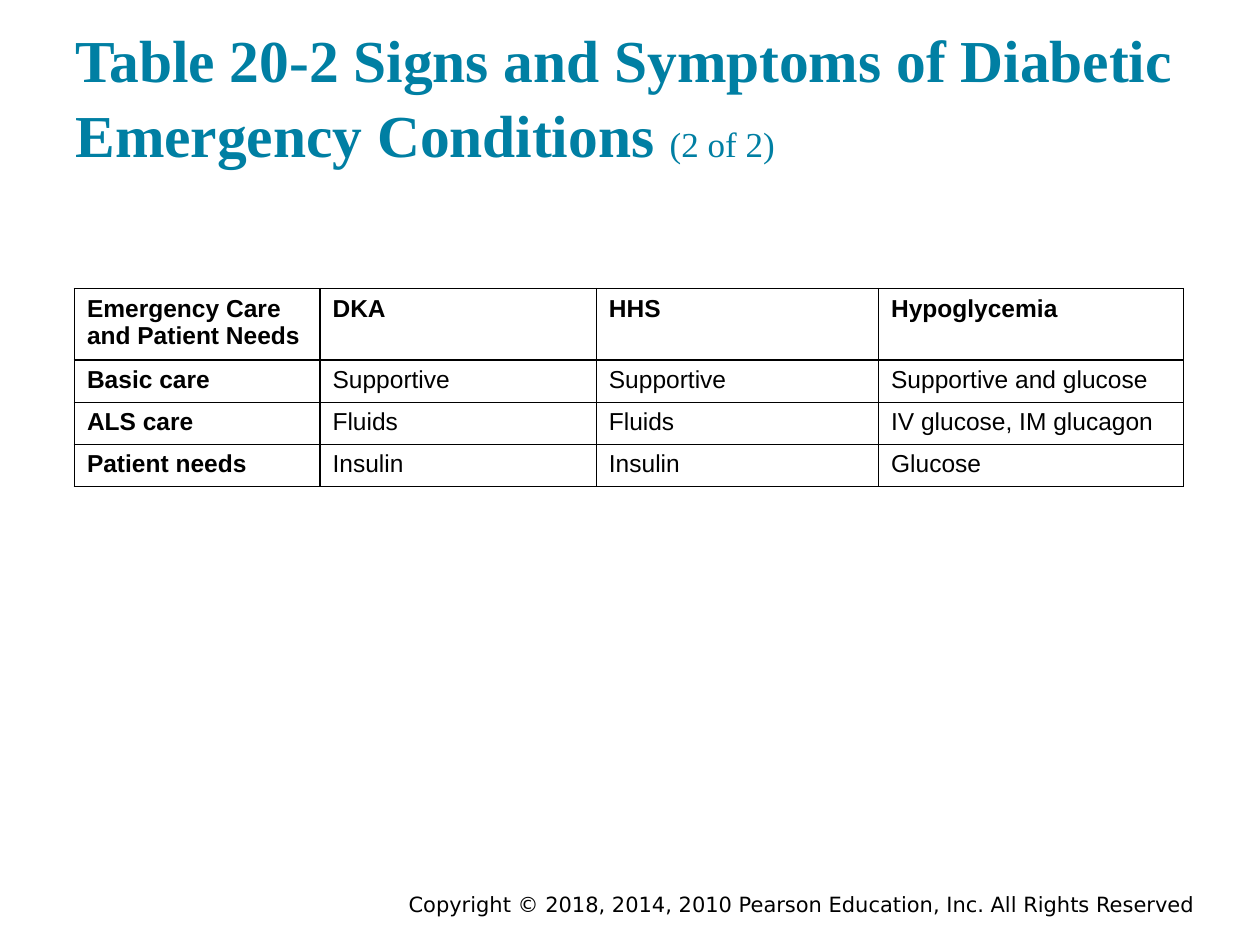
import pptx
import pptx.dml.color
import pptx.enum.text
import pptx.oxml
import pptx.oxml.ns
import pptx.util
from pptx.util import Cm

TITLE = [
    ("Table 20-2 Signs and Symptoms of Diabetic Emergency Conditions ", 34, True),
    ("(2 of 2)", 20, False),
]
ROWS = [
    ("Emergency Care\nand Patient Needs", "DKA", "HHS", "Hypoglycemia"),
    ("Basic care", "Supportive", "Supportive", "Supportive and glucose"),
    ("ALS care", "Fluids", "Fluids", "IV glucose, IM glucagon"),
    ("Patient needs", "Insulin", "Insulin", "Glucose"),
]
COPYRIGHT = "Copyright © 2018, 2014, 2010 Pearson Education, Inc. All Rights Reserved"
COL_WIDTHS = (4.95, 5.57, 5.69, 6.15)
ROW_HEIGHTS = (1.36, 0.81, 0.81, 0.81)
TEAL, BLACK, WHITE = "007FA3", "000000", "FFFFFF"


def paint(color, value):
    """Set a colour from a hex string."""
    color.rgb = pptx.dml.color.RGBColor.from_string(value)


def add_run(p, text, font, size, color, bold=False):
    """Append a formatted run to a paragraph."""
    r = p.add_run()
    r.text = text
    r.font.name = font
    r.font.size = pptx.util.Pt(size)
    r.font.bold = bold
    paint(r.font.color, color)


def add_borders(cell, color, width):
    """Draw a solid line on all four sides of a cell."""
    tcPr = cell._tc.get_or_add_tcPr()
    for side in ("lnL", "lnR", "lnT", "lnB"):
        tcPr.append(pptx.oxml.parse_xml(
            f'<a:{side} {pptx.oxml.ns.nsdecls("a")} w="{pptx.util.Pt(width)}">'
            f'<a:solidFill><a:srgbClr val="{color}"/></a:solidFill></a:{side}>'))


def add_title(s):
    """Place and fill the title placeholder."""
    sp = s.shapes.title
    sp.left, sp.top, sp.width, sp.height = Cm(1.27), Cm(0.61), Cm(22.86), Cm(3.05)
    tf = sp.text_frame
    tf.word_wrap = True
    tf.auto_size = pptx.enum.text.MSO_AUTO_SIZE.NONE
    tf.vertical_anchor = pptx.enum.text.MSO_ANCHOR.BOTTOM
    tf.margin_left = tf.margin_right = tf.margin_top = tf.margin_bottom = Cm(0.25)
    p = tf.paragraphs[0]
    p.alignment = pptx.enum.text.PP_ALIGN.LEFT
    p.line_spacing = 1.05
    for text, size, bold in TITLE:
        add_run(p, text, "Times New Roman", size, TEAL, bold)


def add_care_table(s):
    """Build the table of care and needs by condition."""
    table = s.shapes.add_table(
        len(ROWS), len(COL_WIDTHS), Cm(1.5), Cm(5.82),
        Cm(sum(COL_WIDTHS)), Cm(sum(ROW_HEIGHTS))).table
    table.horz_banding = False
    for col, width in zip(table.columns, COL_WIDTHS):
        col.width = Cm(width)
    for i, (row, height) in enumerate(zip(ROWS, ROW_HEIGHTS)):
        table.rows[i].height = Cm(height)
        for j, text in enumerate(row):
            cell = table.cell(i, j)
            add_borders(cell, BLACK, 1)
            cell.fill.solid()
            paint(cell.fill.fore_color, WHITE)
            tf = cell.text_frame
            for k, line in enumerate(text.split("\n")):
                p = tf.add_paragraph() if k else tf.paragraphs[0]
                add_run(p, line, "Arial", 14, BLACK, i == 0 or j == 0)


def add_copyright(s):
    """Add the right-aligned copyright line."""
    tf = s.shapes.add_textbox(Cm(7.42), Cm(17.91), Cm(16.92), Cm(0.64)).text_frame
    tf.word_wrap = True
    tf.vertical_anchor = pptx.enum.text.MSO_ANCHOR.MIDDLE
    tf.margin_top = tf.margin_bottom = 0
    p = tf.paragraphs[0]
    p.alignment = pptx.enum.text.PP_ALIGN.RIGHT
    add_run(p, COPYRIGHT, "DejaVu Sans", 12, BLACK)


def main():
    """Build the slide and save it."""
    prs = pptx.Presentation()
    prs.slide_width, prs.slide_height = Cm(25.4), Cm(19.05)
    s = prs.slides.add_slide(prs.slide_layouts[5])
    add_copyright(s)
    add_title(s)
    add_care_table(s)
    prs.save("out.pptx")


if __name__ == "__main__":
    main()
